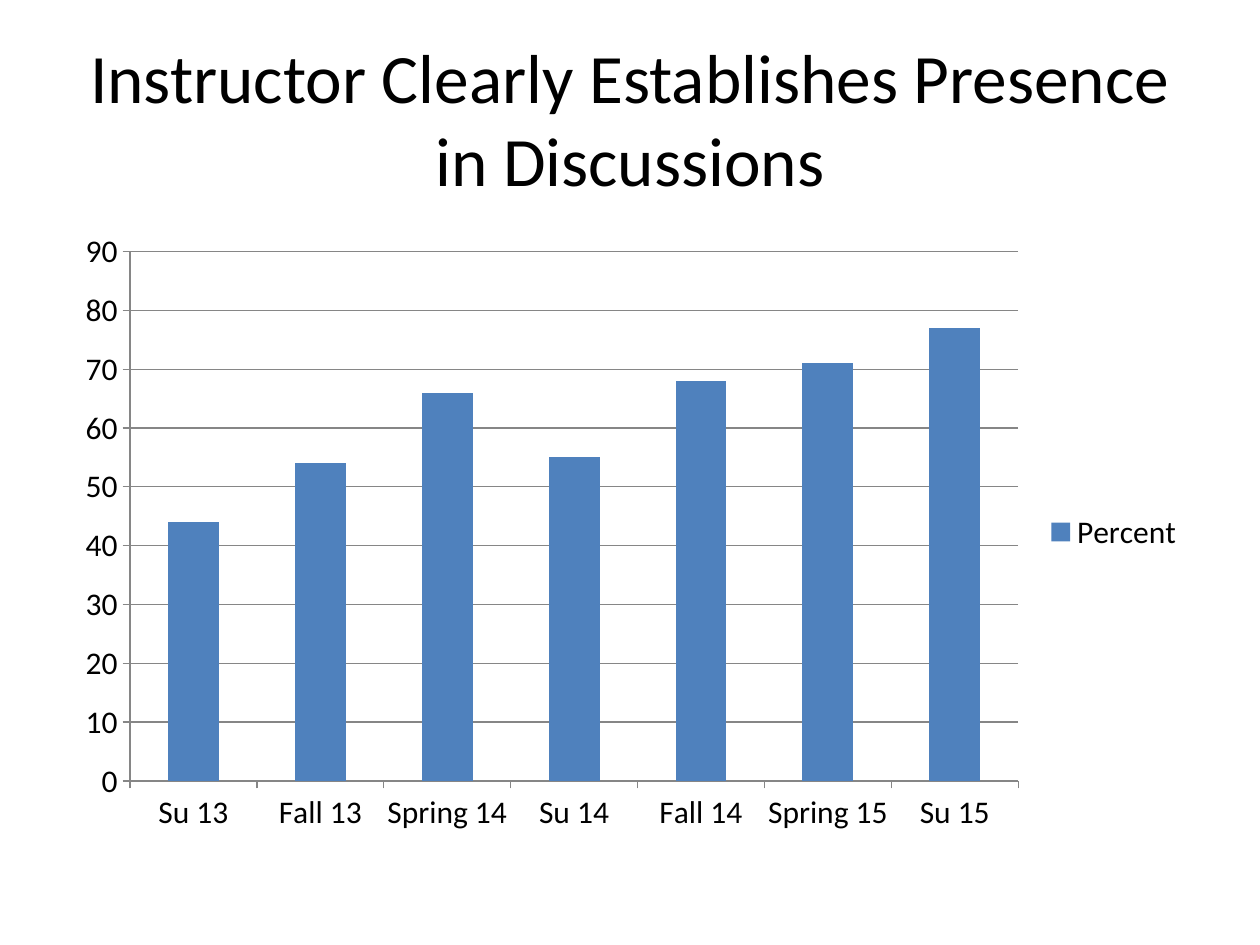
"""Build a slide with a column chart of instructor presence in discussions by term."""
from pptx import Presentation
from pptx.chart.data import CategoryChartData
from pptx.dml.color import RGBColor
from pptx.enum.chart import XL_CHART_TYPE, XL_LEGEND_POSITION, XL_TICK_MARK
from pptx.enum.text import MSO_ANCHOR, PP_ALIGN
from pptx.util import Emu, Pt

BLACK = RGBColor(0x00, 0x00, 0x00)
BLUE = RGBColor(0x4F, 0x81, 0xBD)
GRAY = RGBColor(0x86, 0x86, 0x86)
FONT = "Calibri"
SCALE = 914400 / 126


def px(length):
    return Emu(round(length * SCALE))


presentation = Presentation()
presentation.slide_width = px(1260)
presentation.slide_height = px(945)
slide = presentation.slides.add_slide(presentation.slide_layouts[5])

title = slide.shapes.title
title.left, title.top, title.width, title.height = px(63), px(38), px(1134), px(158)
title.text_frame.text = "Instructor Clearly Establishes Presence in Discussions"
title.text_frame.word_wrap = True
title.text_frame.vertical_anchor = MSO_ANCHOR.MIDDLE
paragraph = title.text_frame.paragraphs[0]
paragraph.alignment = PP_ALIGN.CENTER
title_font = paragraph.runs[0].font
title_font.name = FONT
title_font.size = Pt(39.6)
title_font.color.rgb = BLACK

chart_data = CategoryChartData()
chart_data.categories = ["Su 13", "Fall 13", "Spring 14", "Su 14", "Fall 14", "Spring 15", "Su 15"]
chart_data.add_series("Percent", [44, 54, 66, 55, 68, 71, 77])
chart = slide.shapes.add_chart(
    XL_CHART_TYPE.COLUMN_CLUSTERED, px(63), px(220), px(1134), px(624), chart_data
).chart
chart.has_title = False
chart.font.name = FONT
chart.font.size = Pt(18)
chart.font.color.rgb = BLACK

chart.has_legend = True
chart.legend.position = XL_LEGEND_POSITION.RIGHT
chart.legend.include_in_layout = False

plot = chart.plots[0]
plot.gap_width = 150
plot.vary_by_categories = False
column_fill = plot.series[0].format.fill
column_fill.solid()
column_fill.fore_color.rgb = BLUE

value_axis = chart.value_axis
value_axis.minimum_scale = 0
value_axis.maximum_scale = 90
value_axis.major_unit = 10
value_axis.has_major_gridlines = True
for axis in (chart.category_axis, value_axis):
    axis.major_tick_mark = XL_TICK_MARK.OUTSIDE
    axis.minor_tick_mark = XL_TICK_MARK.NONE
for line in (chart.category_axis.format.line, value_axis.format.line,
             value_axis.major_gridlines.format.line):
    line.color.rgb = GRAY
    line.width = Pt(0.75)

presentation.save("out.pptx")
